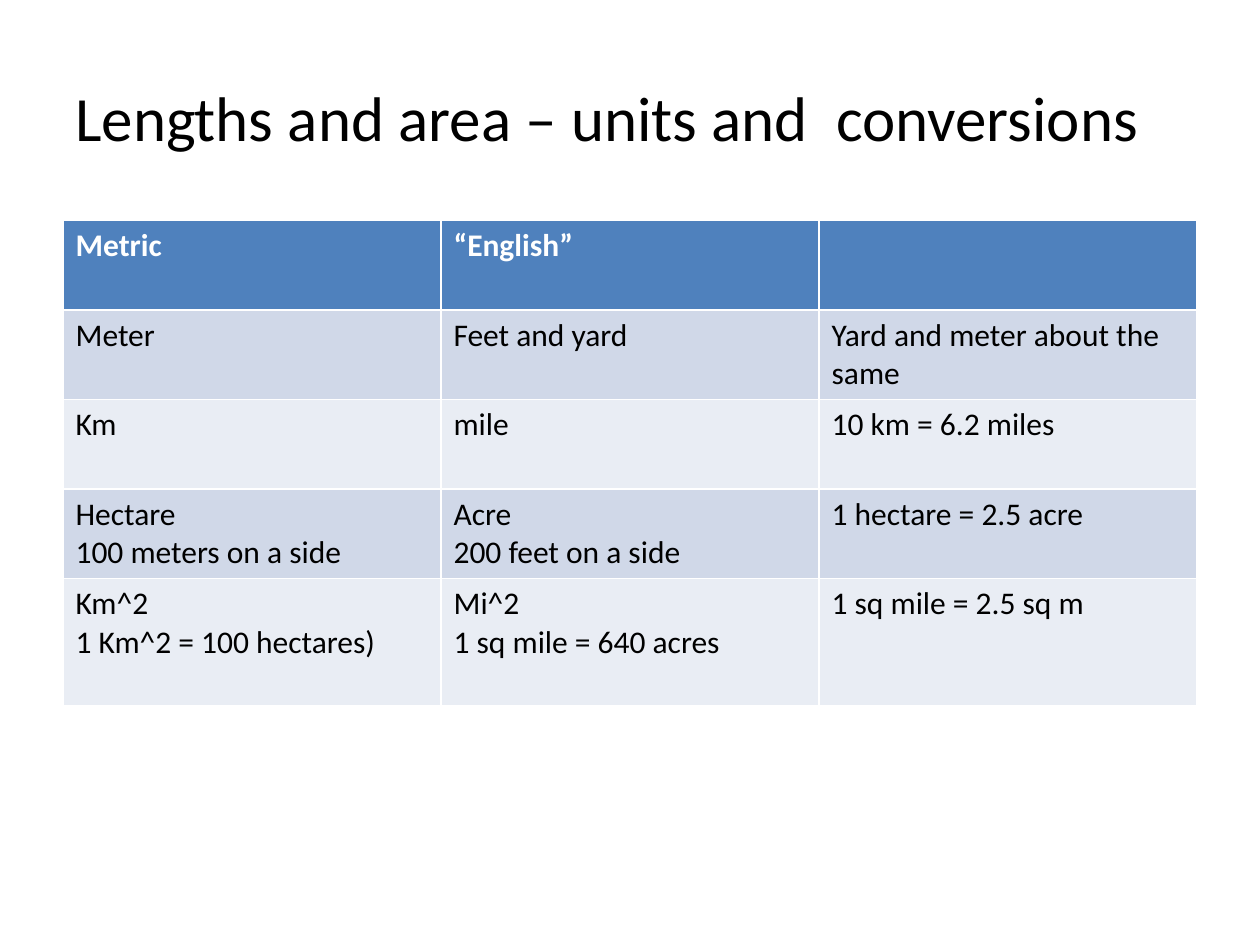
from pptx import Presentation
from pptx.dml.color import RGBColor
from pptx.enum import text
from pptx.util import Inches, Pt


def style_runs(frame, size, color, bold=False):
    for paragraph in frame.paragraphs:
        for run in paragraph.runs:
            run.font.name = "Calibri"
            run.font.size = Pt(size)
            run.font.bold = bold
            run.font.color.rgb = RGBColor.from_string(color)


deck = Presentation()
deck.slide_width = Inches(10)
deck.slide_height = Inches(7.5)
slide = deck.slides.add_slide(deck.slide_layouts[6])

heading = slide.shapes.add_textbox(Inches(0.5), Inches(0.3), Inches(9), Inches(1.25)).text_frame
heading.word_wrap = True
heading.vertical_anchor = text.MSO_ANCHOR.MIDDLE
heading.text = "Lengths and area – units and  conversions"
style_runs(heading, 36, "000000")

unit_rows = [
    ("Metric", "“English”", ""),
    ("Meter", "Feet and yard", "Yard and meter about the same"),
    ("Km", "mile", "10 km = 6.2 miles"),
    ("Hectare\n100 meters on a side", "Acre\n200 feet on a side", "1 hectare = 2.5 acre"),
    ("Km^2\n1 Km^2 = 100 hectares)", "Mi^2\n1 sq mile = 640 acres", "1 sq mile = 2.5 sq m"),
]
row_heights = [0.71, 0.71, 0.71, 0.71, 1.01]
row_fills = ["4F81BD", "D0D8E8", "E9EDF4", "D0D8E8", "E9EDF4"]

conversions = slide.shapes.add_table(
    len(unit_rows), 3, Inches(0.5), Inches(1.75), Inches(9), Inches(sum(row_heights))
).table

for row, units, height, fill in zip(conversions.rows, unit_rows, row_heights, row_fills):
    row.height = Inches(height)
    is_header = units == unit_rows[0]
    for cell, wording in zip(row.cells, units):
        cell.text_frame.text = wording
        cell.fill.solid()
        cell.fill.fore_color.rgb = RGBColor.from_string(fill)
        style_runs(cell.text_frame, 18, "FFFFFF" if is_header else "000000", is_header)

deck.save("out.pptx")
